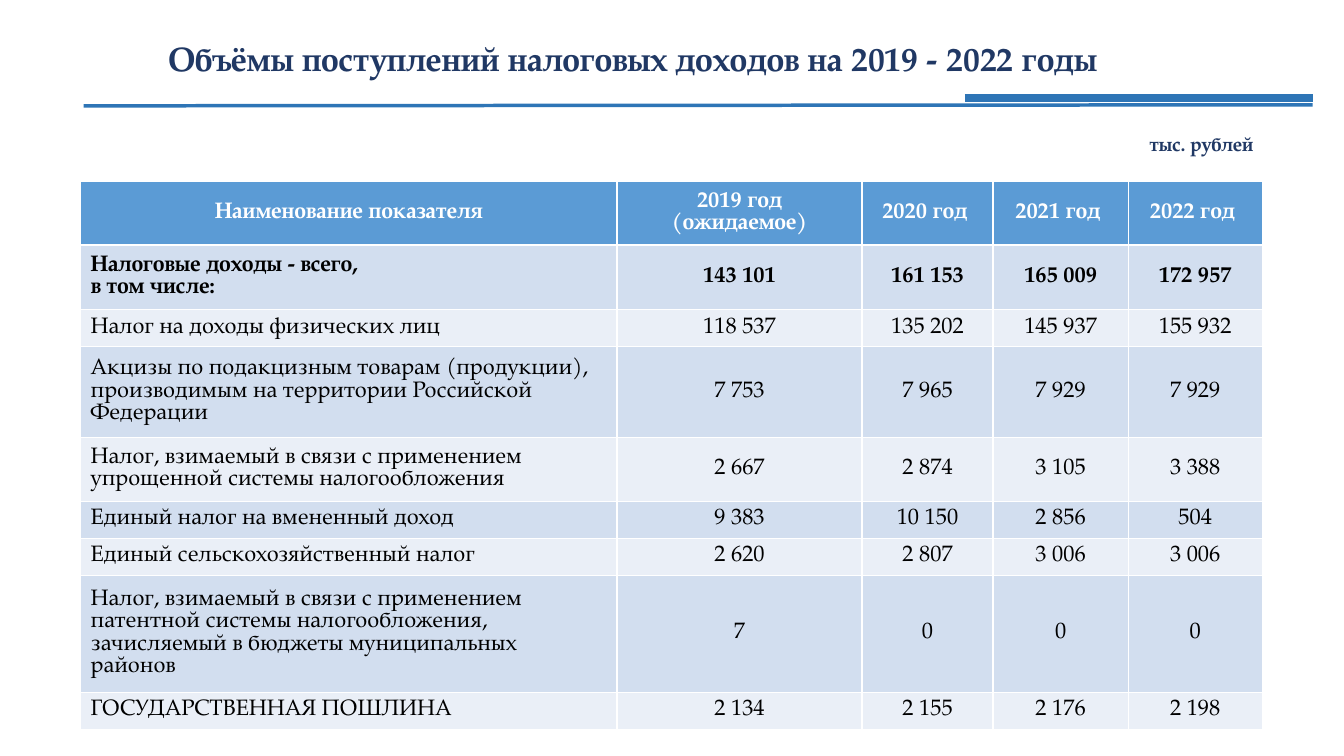
import pptx
import pptx.dml.color
import pptx.enum.shapes
import pptx.enum.text
import pptx.oxml.ns
import pptx.util
from lxml import etree
from pptx.util import Inches

FONT = "TeX Gyre Pagella"
NAVY = "203864"
BLUE = "2E75B6"
HEADER_FILL = "5B9BD5"
BAND_FILLS = ("D2DEEF", "EAEFF7")
ALIGN = pptx.enum.text.PP_ALIGN
MIDDLE = pptx.enum.text.MSO_ANCHOR.MIDDLE

COLUMN_WIDTHS = (5.32, 2.43, 1.3, 1.34, 1.33)
ROW_HEIGHTS = (0.63, 0.64, 0.37, 0.9, 0.64, 0.36, 0.37, 1.16, 0.37)
TAX_ROWS = (
    ("Наименование показателя", "2019 год (ожидаемое)", "2020 год ", "2021 год ", "2022 год "),
    ("Налоговые доходы - всего,\nв том числе:", "143 101", "161 153", "165 009", "172 957"),
    ("Налог на доходы физических лиц", "118 537", "135 202", "145 937", "155 932"),
    ("Акцизы по подакцизным товарам (продукции), производимым на территории "
     "Российской Федерации", "7 753", "7 965", "7 929", "7 929"),
    ("Налог, взимаемый в связи с применением упрощенной системы налогообложения",
     "2 667", "2 874", "3 105", "3 388"),
    ("Единый налог на вмененный доход", "9 383", "10 150", "2 856", "504"),
    ("Единый сельскохозяйственный налог", "2 620", "2 807", "3 006", "3 006"),
    ("Налог, взимаемый в связи с применением патентной системы налогообложения, "
     "зачисляемый в бюджеты муниципальных районов", "7", "0", "0", "0"),
    ("ГОСУДАРСТВЕННАЯ ПОШЛИНА", "2 134", "2 155", "2 176", "2 198"),
)


def rgb(color):
    return pptx.dml.color.RGBColor.from_string(color)


def write(frame, text, size, color, bold, align):
    frame.text = text
    frame.word_wrap = True
    for paragraph in frame.paragraphs:
        paragraph.alignment = align
        font = paragraph.font
        font.name = FONT
        font.size = pptx.util.Pt(size)
        font.bold = bold
        font.color.rgb = rgb(color)


def add_title(slide, text):
    title = slide.shapes.title
    title.left, title.top = Inches(0.28), Inches(0.07)
    title.width, title.height = Inches(11.99), Inches(1.01)
    write(title.text_frame, text, 24, NAVY, True, ALIGN.CENTER)
    title.text_frame.vertical_anchor = MIDDLE


def add_unit(slide, text):
    unit = slide.shapes.add_textbox(Inches(10.82), Inches(1.26), Inches(1.71), Inches(0.34))
    write(unit.text_frame, text, 14, NAVY, True, ALIGN.RIGHT)


def add_rule(slide, start, end, weight):
    rule = slide.shapes.add_connector(
        pptx.enum.shapes.MSO_CONNECTOR.STRAIGHT, *map(Inches, start + end))
    rule.line.color.rgb = rgb(BLUE)
    rule.line.width = pptx.util.Pt(weight)
    etree.SubElement(rule._element.spPr, pptx.oxml.ns.qn("a:effectLst"))


def add_tax_table(slide):
    table = slide.shapes.add_table(
        len(TAX_ROWS), len(COLUMN_WIDTHS), Inches(0.8), Inches(1.8),
        Inches(sum(COLUMN_WIDTHS)), Inches(sum(ROW_HEIGHTS))).table
    for column, width in zip(table.columns, COLUMN_WIDTHS):
        column.width = Inches(width)
    for r, (values, height) in enumerate(zip(TAX_ROWS, ROW_HEIGHTS)):
        table.rows[r].height = Inches(height)
        header = r == 0
        fill = HEADER_FILL if header else BAND_FILLS[(r - 1) % 2]
        for c, value in enumerate(values):
            cell = table.cell(r, c)
            cell.fill.solid()
            cell.fill.fore_color.rgb = rgb(fill)
            cell.vertical_anchor = MIDDLE
            align = ALIGN.LEFT if c == 0 and not header else ALIGN.CENTER
            write(cell.text_frame, value, 16, "FFFFFF" if header else "000000", r < 2, align)
            for paragraph in cell.text_frame.paragraphs:
                paragraph.line_spacing = pptx.util.Pt(16)


def main():
    deck = pptx.Presentation()
    deck.slide_width, deck.slide_height = Inches(13.33), Inches(7.5)
    slide = deck.slides.add_slide(deck.slide_layouts[5])
    add_title(slide, "Объёмы поступлений налоговых доходов на 2019 - 2022 годы")
    add_unit(slide, "тыс. рублей")
    add_rule(slide, (0.83, 1.05), (13.02, 1.04), 2.5)
    add_rule(slide, (9.57, 0.97), (13.02, 0.97), 6)
    add_tax_table(slide)
    deck.save("out.pptx")


if __name__ == "__main__":
    main()
